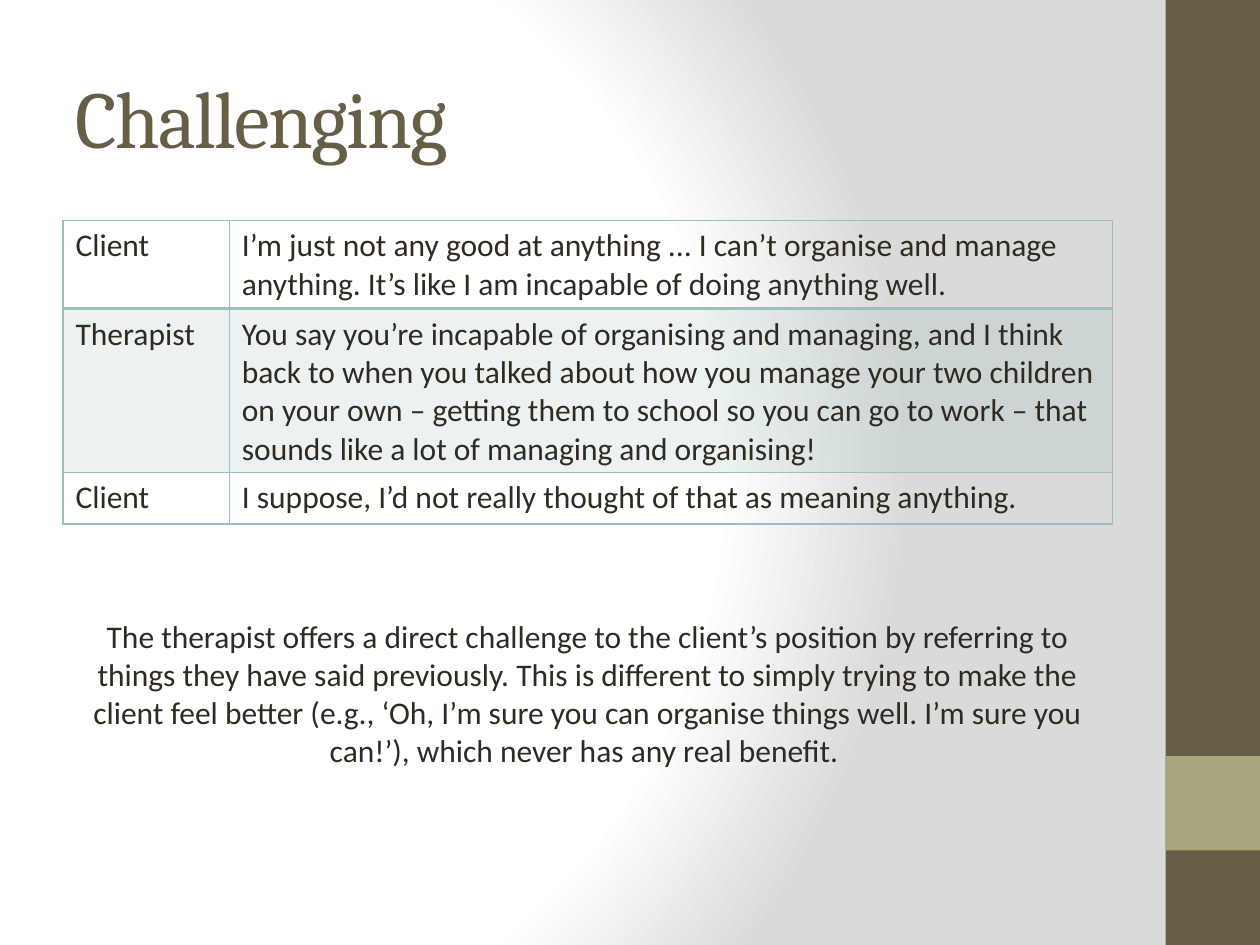
from lxml import etree
from pptx import Presentation
from pptx.dml.color import RGBColor
from pptx.enum.shapes import MSO_SHAPE
from pptx.enum.text import MSO_ANCHOR, MSO_AUTO_SIZE, PP_ALIGN
from pptx.oxml import parse_xml
from pptx.oxml.ns import qn
from pptx.util import Inches, Pt

RECT = MSO_SHAPE.RECTANGLE
TOP, MIDDLE = MSO_ANCHOR.TOP, MSO_ANCHOR.MIDDLE
LEFT, CENTER = PP_ALIGN.LEFT, PP_ALIGN.CENTER
GROW = MSO_AUTO_SIZE.SHAPE_TO_FIT_TEXT

COLORS = {"brown": "675E47", "olive": "A9A57C", "text": "2F2B20",
          "teal": "9CBEBD", "white": "FFFFFF", "grey": "DADADA"}
NS = 'xmlns:a="http://schemas.openxmlformats.org/drawingml/2006/main"'
NO_STYLE = "{2D5ABB26-0587-4C30-8999-92F81FD0307C}"
MARGIN, WIDTH = 0.5, 8.33


def rgb(name):
    return RGBColor.from_string(COLORS[name])


def write(tf, text, size=18, font="Calibri", color="text", align=LEFT, spacing=None):
    p = tf.paragraphs[0]
    p.alignment = align
    r = p.add_run()
    r.text = text
    r.font.size, r.font.name = Pt(size), font
    r.font.color.rgb = rgb(color)
    if spacing is not None:
        r.font._element.set("spc", str(int(spacing * 100)))


class SlideBuilder:
    def __init__(self, prs):
        self.s = prs.slides.add_slide(prs.slide_layouts[6])

    def background(self, stops, focus):
        fill = self.s.background.fill
        fill.gradient()
        grad = self.s.background._cSld.find(".//" + qn("a:gradFill"))
        marks = "".join(f'<a:gs pos="{pos * 1000}"><a:srgbClr val="{COLORS[c]}"/></a:gs>'
                        for pos, c in stops)
        sides = " ".join(f'{side}="{v * 1000}"' for side, v in zip("ltrb", focus))
        grad.getparent().replace(grad, parse_xml(
            f'<a:gradFill {NS} rotWithShape="1"><a:gsLst>{marks}</a:gsLst>'
            f'<a:path path="circle"><a:fillToRect {sides}/></a:path></a:gradFill>'))

    def rect(self, x, y, w, h, color):
        sp = self.s.shapes.add_shape(RECT, Inches(x), Inches(y), Inches(w), Inches(h))
        sp.shadow.inherit = False
        sp.fill.solid()
        sp.fill.fore_color.rgb = rgb(color)
        sp.line.fill.background()

    def text(self, x, y, w, h, text, anchor=TOP, grow=False, **style):
        sp = self.s.shapes.add_textbox(Inches(x), Inches(y), Inches(w), Inches(h))
        tf = sp.text_frame
        tf.word_wrap = True
        tf.vertical_anchor = anchor
        if grow:
            tf.auto_size = GROW
        write(tf, text, **style)

    def format_cell(self, cell, shaded, widths):
        cell.fill.background()
        if shaded:
            cell.fill.solid()
            cell.fill.fore_color.rgb = rgb("teal")
            clr = cell._tc.tcPr.find(".//" + qn("a:srgbClr"))
            etree.SubElement(clr, qn("a:alpha")).set("val", "20000")
        for i, (side, width) in enumerate(widths.items()):
            cell._tc.tcPr.insert(i, parse_xml(
                f'<a:ln{side} {NS} w="{Pt(width)}"><a:solidFill>'
                f'<a:srgbClr val="{COLORS["teal"]}"/></a:solidFill></a:ln{side}>'))

    def table(self, x, y, w, h, rows, col_widths, row_height):
        frame = self.s.shapes.add_table(len(rows), len(col_widths), Inches(x),
                                        Inches(y), Inches(w), Inches(h))
        table = frame.table
        table.first_row = table.horz_banding = False
        table._tbl.tblPr.find(qn("a:tableStyleId")).text = NO_STYLE
        for col, width in zip(table.columns, col_widths):
            col.width = Inches(width)
        for i, row in enumerate(rows):
            table.rows[i].height = Inches(row_height)
            for j, value in enumerate(row):
                cell = table.cell(i, j)
                write(cell.text_frame, value)
                # The rule under the first row is heavier
                self.format_cell(cell, i == 1, {"L": 1, "R": 1, "T": 2 if i == 1 else 1,
                                                "B": 2 if i == 0 else 1})
        frame.height = Inches(h)


def main():
    prs = Presentation()
    prs.slide_width, prs.slide_height = Inches(10), Inches(7.5)
    slide = SlideBuilder(prs)

    # Background and side band
    slide.background([(0, "white"), (75, "white"), (100, "grey")], (20, 50, 100, 50))
    slide.rect(9.25, 0, 0.75, 7.5, "brown")
    slide.rect(9.25, 6, 0.75, 0.75, "olive")

    # Title
    slide.text(MARGIN, 0.3, WIDTH, 1.25, "Challenging", anchor=MIDDLE, size=46,
               font="Cambria", color="brown", spacing=-1)

    # Dialogue
    dialogue = [
        ("Client", "I’m just not any good at anything ... I can’t organise and manage "
                   "anything. It’s like I am incapable of doing anything well."),
        ("Therapist", "You say you’re incapable of organising and managing, and I think "
                      "back to when you talked about how you manage your two children on "
                      "your own – getting them to school so you can go to work – that "
                      "sounds like a lot of managing and organising!"),
        ("Client", "I suppose, I’d not really thought of that as meaning anything."),
    ]
    slide.table(MARGIN, 1.75, WIDTH, 2.41, dialogue, (1.32, 7.01), 0.41)

    # Comment
    slide.text(MARGIN, 4.85, WIDTH, 1.62,
               "The therapist offers a direct challenge to the client’s position by "
               "referring to things they have said previously. This is different to simply "
               "trying to make the client feel better (e.g., ‘Oh, I’m sure you can organise "
               "things well. I’m sure you can!’), which never has any real benefit. ",
               grow=True, align=CENTER)

    prs.save("out.pptx")


if __name__ == "__main__":
    main()
